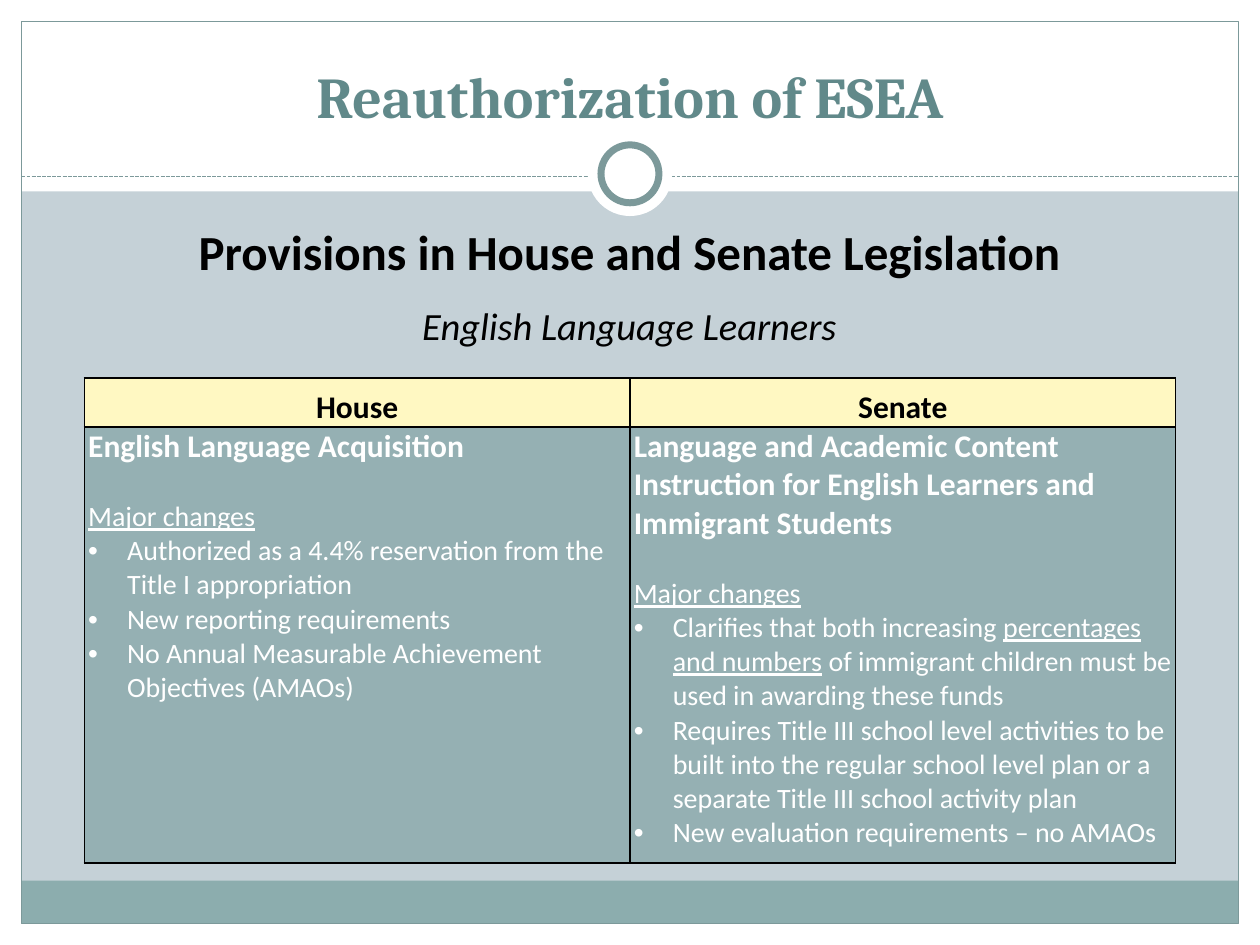
from lxml import etree
from pptx import Presentation
from pptx import util as u
from pptx.dml.color import RGBColor
from pptx.enum import dml, shapes, text
from pptx.oxml.ns import qn

TITLE = "Reauthorization of ESEA"
HEADING = "Provisions in House and Senate Legislation"
TOPIC = "English Language Learners"
CHANGES = "Major changes"
# Each bullet is a list of (words, underlined) pieces.
CHAMBERS = [
    ("House", "English Language Acquisition", [
        [("Authorized as a 4.4% reservation from the Title I appropriation", False)],
        [("New reporting requirements", False)],
        [("No Annual Measurable Achievement Objectives (AMAOs)", False)],
    ]),
    ("Senate", "Language and Academic Content Instruction for English Learners "
               "and Immigrant Students", [
        [("Clarifies that both increasing ", False),
         ("percentages and numbers", True),
         (" of immigrant children must be used in awarding these funds", False)],
        [("Requires Title III school level activities to be built into the regular "
          "school level plan or a separate Title III school activity plan", False)],
        [("New evaluation requirements – no AMAOs", False)],
    ]),
]
COLORS = {"backdrop": "C5D1D7", "paper": "FFFFFF", "footer": "8CADAE",
          "trim": "7C999A", "title": "61898A", "ink": "000000",
          "header": "FFF8C2", "body": "95B0B3"}
WIDTH, HEIGHT = 10, 7.5
EDGE = 0.17
BAND_BOTTOM, RULE_Y = 1.52, 1.4
TABLE_LEFT, TABLE_TOP = 0.67, 3
ROW_HEIGHTS = [0.39, 3.46]
INDENT = 0.31


def color(name):
    return RGBColor.from_string(COLORS[name])


def write(paragraph, words, size=16, ink="ink", font="Calibri", bold=False,
          italic=False, underline=False, align=text.PP_ALIGN.LEFT, before=0):
    run = paragraph.add_run()
    run.text = words
    run.font.size, run.font.name = u.Pt(size), font
    run.font.bold, run.font.italic, run.font.underline = bold, italic, underline
    run.font.color.rgb = color(ink)
    paragraph.alignment = align
    paragraph.space_before = u.Pt(before)


def add_bullet(paragraph):
    props = paragraph._p.get_or_add_pPr()
    props.set("marL", str(u.Inches(INDENT)))
    props.set("indent", str(-u.Inches(INDENT)))
    etree.SubElement(props, qn("a:buFont"), typeface="Arial")
    etree.SubElement(props, qn("a:buChar"), char="•")


def add_panel(slide, box, fill=None, line=None, weight=0.75,
              kind=shapes.MSO_SHAPE.RECTANGLE):
    panel = slide.shapes.add_shape(kind, *map(u.Inches, box))
    panel.shadow.inherit = False
    if fill:
        panel.fill.solid()
        panel.fill.fore_color.rgb = color(fill)
    else:
        panel.fill.background()
    if line:
        panel.line.color.rgb = color(line)
        panel.line.width = u.Pt(weight)
    else:
        panel.line.fill.background()


def add_ring(slide, diameter, center_y, **style):
    box = (WIDTH / 2 - diameter / 2, center_y - diameter / 2, diameter, diameter)
    add_panel(slide, box, "paper", kind=shapes.MSO_SHAPE.OVAL, **style)


def add_frame(slide):
    slide.background.fill.solid()
    slide.background.fill.fore_color.rgb = color("backdrop")
    for box in [(0, HEIGHT - EDGE, WIDTH, EDGE), (0, 0, WIDTH, BAND_BOTTOM),
                (0, 0, EDGE, HEIGHT), (WIDTH - EDGE, 0, EDGE, HEIGHT)]:
        add_panel(slide, box, "paper")
    inner = WIDTH - 2 * EDGE
    add_panel(slide, (EDGE, 6.99, inner, 0.34), "footer")
    add_panel(slide, (EDGE, EDGE, inner, HEIGHT - 2 * EDGE), line="trim")
    rule = slide.shapes.add_connector(
        shapes.MSO_CONNECTOR.STRAIGHT,
        *map(u.Inches, (EDGE, RULE_Y, WIDTH - EDGE, RULE_Y)))
    rule.line.color.rgb = color("trim")
    rule.line.width = u.Pt(0.75)
    rule.line.dash_style = dml.MSO_LINE.SQUARE_DOT
    etree.SubElement(rule._element.spPr, qn("a:effectLst"))
    add_ring(slide, 0.67, 1.38)
    add_ring(slide, 0.46, 1.38, line="trim", weight=4)


def add_title(slide):
    title = slide.shapes.title
    title.left, title.top, title.width, title.height = map(
        u.Inches, (0.5, 0.35, 9, 0.73))
    frame = title.text_frame
    frame.auto_size = text.MSO_AUTO_SIZE.NONE
    frame.vertical_anchor = text.MSO_ANCHOR.BOTTOM
    write(frame.paragraphs[0], TITLE, size=33, ink="title", font="Cambria",
          bold=True, align=text.PP_ALIGN.CENTER)
    slide.shapes._spTree.append(title._element)  # in front of the white band


def add_subtitle(slide):
    frame = slide.shapes.add_textbox(
        *map(u.Inches, (0.33, 1.76, 9.33, 1.1))).text_frame
    frame.word_wrap = True
    frame.margin_top = 0
    center = text.PP_ALIGN.CENTER
    write(frame.paragraphs[0], HEADING, size=28, bold=True, align=center)
    write(frame.add_paragraph(), TOPIC, size=22, italic=True, align=center, before=12)


def style_cell(cell, fill, top=0):
    cell.margin_left = cell.margin_right = u.Inches(0.03)
    cell.margin_top, cell.margin_bottom = u.Inches(top), 0
    props = cell._tc.get_or_add_tcPr()
    for side in ("lnL", "lnR", "lnT", "lnB"):
        border = etree.SubElement(props, qn(f"a:{side}"), w=str(u.Pt(1)))
        solid = etree.SubElement(border, qn("a:solidFill"))
        etree.SubElement(solid, qn("a:srgbClr"), val=COLORS["ink"])
    cell.fill.solid()
    cell.fill.fore_color.rgb = color(fill)


def add_comparison(slide):
    table = slide.shapes.add_table(
        len(ROW_HEIGHTS), len(CHAMBERS),
        *map(u.Inches, (TABLE_LEFT, TABLE_TOP, WIDTH - 2 * TABLE_LEFT,
                        sum(ROW_HEIGHTS)))).table
    for row, height in zip(table.rows, ROW_HEIGHTS):
        row.height = u.Inches(height)
    for column, (chamber, program, bullets) in enumerate(CHAMBERS):
        header, body = table.cell(0, column), table.cell(1, column)
        style_cell(header, "header", top=0.08)
        header.vertical_anchor = text.MSO_ANCHOR.MIDDLE
        write(header.text_frame.paragraphs[0], chamber, size=18, bold=True,
              align=text.PP_ALIGN.CENTER)
        style_cell(body, "body")
        frame = body.text_frame
        write(frame.paragraphs[0], program, size=18, ink="paper", bold=True)
        write(frame.add_paragraph(), CHANGES, ink="paper", underline=True, before=19.5)
        for pieces in bullets:
            paragraph = frame.add_paragraph()
            for words, underlined in pieces:
                write(paragraph, words, ink="paper", underline=underlined)
            add_bullet(paragraph)


def main():
    deck = Presentation()
    deck.slide_width, deck.slide_height = u.Inches(WIDTH), u.Inches(HEIGHT)
    slide = deck.slides.add_slide(deck.slide_layouts.get_by_name("Title Only"))
    add_frame(slide)
    add_title(slide)
    add_subtitle(slide)
    add_comparison(slide)
    deck.save("out.pptx")


if __name__ == "__main__":
    main()
